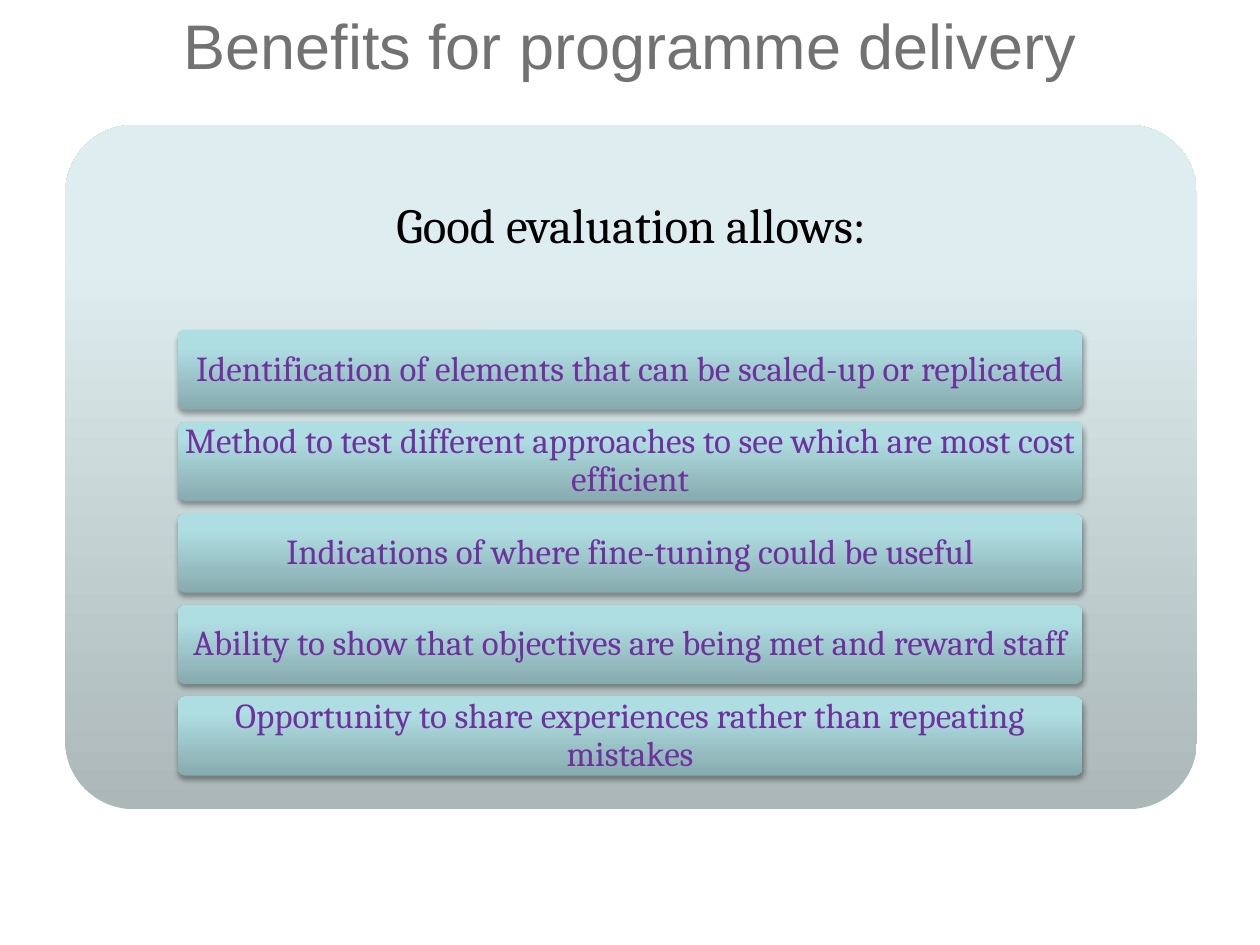
from copy import deepcopy
from lxml.etree import SubElement as Sub
from pptx import Presentation as Deck
from pptx.dml.color import RGBColor as Rgb
from pptx.enum.shapes import MSO_SHAPE as Kind
from pptx.enum.text import MSO_ANCHOR as Anchor, PP_ALIGN as Align
from pptx.oxml.ns import qn
from pptx.util import Pt

HUES = {
    "title": "727272",
    "head": "000000",
    "bar": "7030A0",
    "shade": "000000",
}
FADES = {
    "panel": ["ABB7B8", "DEEDEF", "DFEFF0"],
    "bar": ["87ABAE", "AFDEE2", "AFE0E4"],
}
STOPS = [0, 0.8, 1]
BARS = [
    "Identification of elements that can be scaled-up or replicated",
    "Method to test different approaches to see which are most cost efficient",
    "Indications of where fine-tuning could be useful",
    "Ability to show that objectives are being met and reward staff",
    "Opportunity to share experiences rather than repeating mistakes",
]


class Board:
    def __init__(self, slide, face):
        self.slide = slide
        self.face = face

    def letter(self, shape, text, size, hue, pad, face=None, lead=0.9):
        frame = shape.text_frame
        form = {
            "word_wrap": True,
            "vertical_anchor": Anchor.MIDDLE,
            "margin_left": Pt(pad),
            "margin_right": Pt(pad),
            "margin_top": Pt(pad),
            "margin_bottom": Pt(pad),
        }
        for key, val in form.items():
            setattr(frame, key, val)
        para = frame.paragraphs[0]
        para.text = text
        para.alignment = Align.CENTER
        para.line_spacing = lead
        font = para.runs[0].font
        for key, val in {"name": face or self.face, "size": Pt(size)}.items():
            setattr(font, key, val)
        font.color.rgb = Rgb.from_string(HUES[hue])

    def label(self, box, *args, **form):
        shape = self.slide.shapes.add_textbox(*map(Pt, box))
        self.letter(shape, *args, **form)

    def block(self, box, fade):
        shape = self.slide.shapes.add_shape(Kind.ROUNDED_RECTANGLE, *map(Pt, box))
        shape.adjustments[0] = 0.1
        shape.shadow.inherit = False
        shape.line.fill.background()
        fill = shape.fill
        fill.gradient()
        fill.gradient_angle = 90
        stops = next(shape.element.iter(qn("a:gsLst")))
        stops.append(deepcopy(stops[-1]))
        for stop, spot, hue in zip(fill.gradient_stops, STOPS, FADES[fade]):
            stop.position = spot
            stop.color.rgb = Rgb.from_string(hue)
        return shape

    def bar(self, box, text):
        shape = self.block(box, "bar")
        self.shade(shape)
        self.letter(shape, text, 20, "bar", 2.5)

    def shade(self, shape):
        effects = next(shape.element.iter(qn("a:effectLst")))
        form = {
            "blurRad": Pt(3.1),
            "dist": Pt(1.8),
            "dir": 90 * 60000,
            "rotWithShape": 0,
        }
        drop = Sub(effects, qn("a:outerShdw"))
        for key, val in form.items():
            drop.set(key, str(int(val)))
        tint = Sub(drop, qn("a:srgbClr"), val=HUES["shade"])
        Sub(tint, qn("a:alpha"), val="35000")


def main():
    deck = Deck()
    deck.slide_width, deck.slide_height = Pt(720), Pt(540)
    board = Board(deck.slides.add_slide(deck.slide_layouts[6]), "Cambria")
    board.label((36.5, 0, 647, 51), "Benefits for programme delivery", 36, "title", 3.6,
                face="Arial", lead=1)
    left, top, width = 37.3, 71.4, 646.6
    board.block((left, top, width, 391), "panel")
    board.label((left, top, width, 117.3), "Good evaluation allows:", 28, "head", 8.6)
    for row, text in enumerate(BARS):
        board.bar((101.5, 188.8 + row * 52.3, 517.2, 45.3), text)
    deck.save("out.pptx")


if __name__ == "__main__":
    main()
